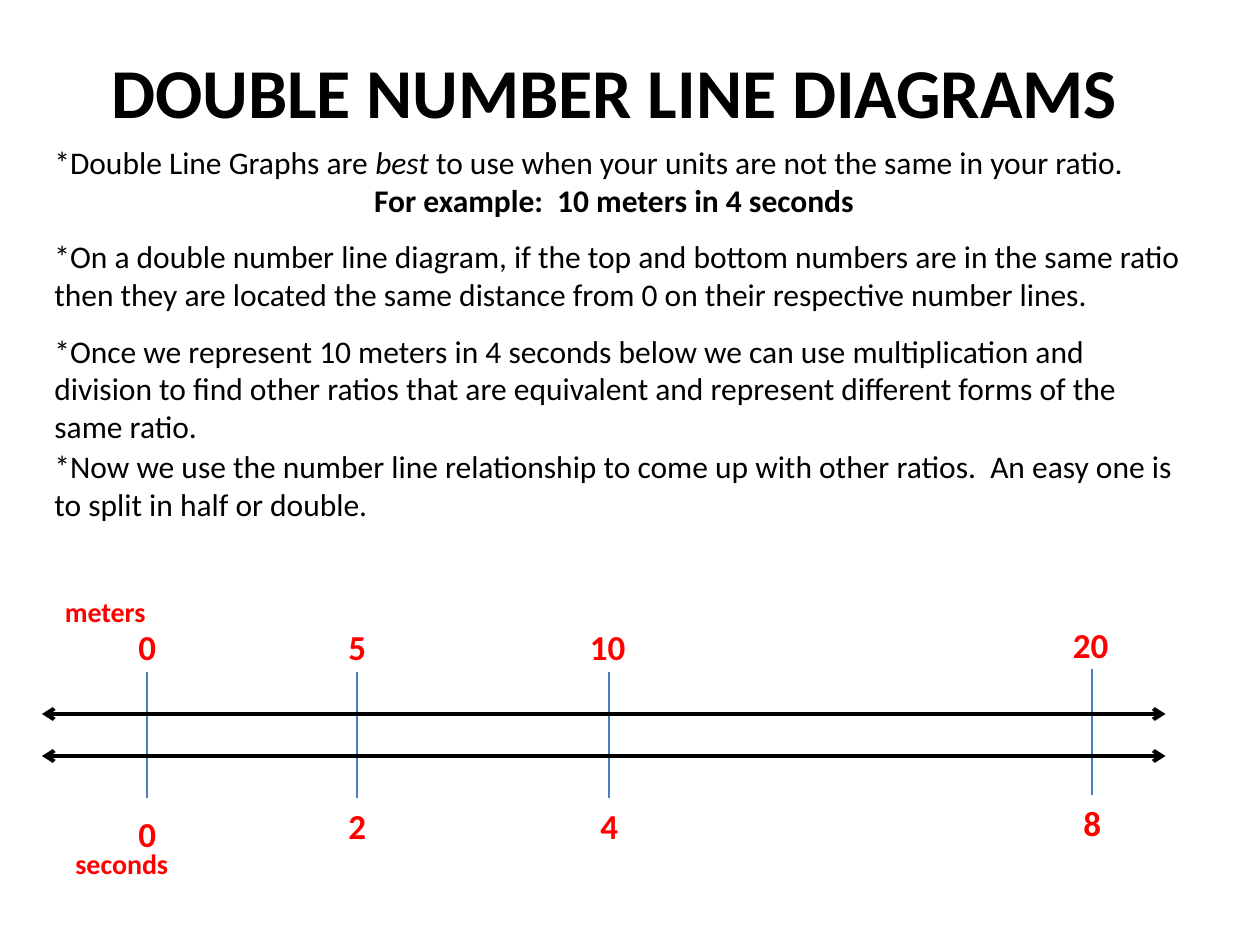
from lxml.etree import SubElement
from pptx import Presentation
from pptx.dml.color import RGBColor
from pptx.enum.shapes import MSO_CONNECTOR
from pptx.enum.text import MSO_AUTO_SIZE, PP_ALIGN
from pptx.oxml.ns import qn
from pptx.util import Pt

EMU_PER_PX = 9525  # 96 px to the inch
BLACK = RGBColor(0x00, 0x00, 0x00)
RED = RGBColor(0xFF, 0x00, 0x00)
BLUE = RGBColor(0x4B, 0x7E, 0xBC)

# Left, top, width, height and text of each explanation
EXPLANATIONS = [
    (32, 176, 904, 68, "*On a double number line diagram, if the top and bottom numbers "
     "are in the same ratio then they are located the same distance from 0 on their "
     "respective number lines."),
    (32, 248, 872, 97, "*Once we represent 10 meters in 4 seconds below we can use "
     "multiplication and division to find other ratios that are equivalent and represent "
     "different forms of the same ratio."),
    (32, 336, 880, 68, "*Now we use the number line relationship to come up with other "
     "ratios.  An easy one is to split in half or double."),
]

# Tick x, tick top, meters, width of the meters label, seconds, top of the seconds label
TICKS = [
    (112, 512, "0", 32, "0", 614),
    (272, 512, "5", 48, "2", 608),
    (464, 512, "10", 48, "4", 608),
    (832, 510, "20", 48, "8", 606),
]
TICK_LENGTH = 96
LABEL_HEIGHT = 42


def px(length):
    return length * EMU_PER_PX


class SlideBuilder:
    """Holds the font and the current slide."""

    def __init__(self, slide, font="Calibri"):
        self.slide = slide
        self.font = font

    def text(self, left, top, width, height, paragraphs, size, color=BLACK, bold=False):
        """Add a text box; each paragraph is a list of run texts."""
        box = self.slide.shapes.add_textbox(px(left), px(top), px(width), px(height))
        frame = box.text_frame
        frame.word_wrap = True
        frame.auto_size = MSO_AUTO_SIZE.SHAPE_TO_FIT_TEXT
        for index, run_texts in enumerate(paragraphs):
            paragraph = frame.add_paragraph() if index else frame.paragraphs[0]
            for run_text in run_texts:
                run = paragraph.add_run()
                run.text = run_text
                run.font.name = self.font
                run.font.size = Pt(size)
                run.font.color.rgb = color
                run.font.bold = bold
        return frame.paragraphs

    def line(self, start, end, color, width, arrows=False):
        connector = self.slide.shapes.add_connector(
            MSO_CONNECTOR.STRAIGHT, *map(px, start + end))
        connector.line.color.rgb = color
        connector.line.width = Pt(width)
        if arrows:
            outline = connector.line._get_or_add_ln()
            for tag in ("a:headEnd", "a:tailEnd"):
                SubElement(outline, qn(tag), type="arrow")
        SubElement(connector._element.spPr, qn("a:effectLst"))

    def number(self, x, top, width, value):
        """Add a number whose digits are centred on x."""
        left = x - 8 * (len(value) + 1)
        self.text(left, top, width, LABEL_HEIGHT, [[value]], 20, RED, bold=True)

    def tick(self, x, top, meters, meters_width, seconds, seconds_top):
        self.line((x, top), (x, top + TICK_LENGTH), BLUE, 0.75)
        self.number(x, top - 40, meters_width, meters)
        self.number(x, seconds_top, 32, seconds)


def main():
    presentation = Presentation()
    presentation.slide_width = px(960)
    presentation.slide_height = px(720)
    slide = presentation.slides.add_slide(presentation.slide_layouts[6])
    builder = SlideBuilder(slide)

    title = builder.text(24, 32, 888, 74, [["DOUBLE NUMBER LINE DIAGRAMS"]], 40, bold=True)
    title[0].alignment = PP_ALIGN.CENTER

    usage, example = builder.text(32, 104, 872, 68, [
        ["*Double Line Graphs are ", "best",
         " to use when your units are not the same in your ratio."],
        ["For example:  10 meters in 4 seconds"],
    ], 18)
    usage.runs[1].font.italic = True
    example.alignment = PP_ALIGN.CENTER
    example.runs[0].font.bold = True

    for left, top, width, height, explanation in EXPLANATIONS:
        builder.text(left, top, width, height, [[explanation]], 18)

    for tick in TICKS:
        builder.tick(*tick)
    for left, top, unit in ((40, 448, "meters"), (48, 640, "seconds")):
        builder.text(left, top, 96, 35, [[unit]], 16, RED, bold=True)
    for y in (544, 576):
        builder.line((32, y), (888, y), BLACK, 2.25, arrows=True)

    presentation.save("out.pptx")


if __name__ == "__main__":
    main()
